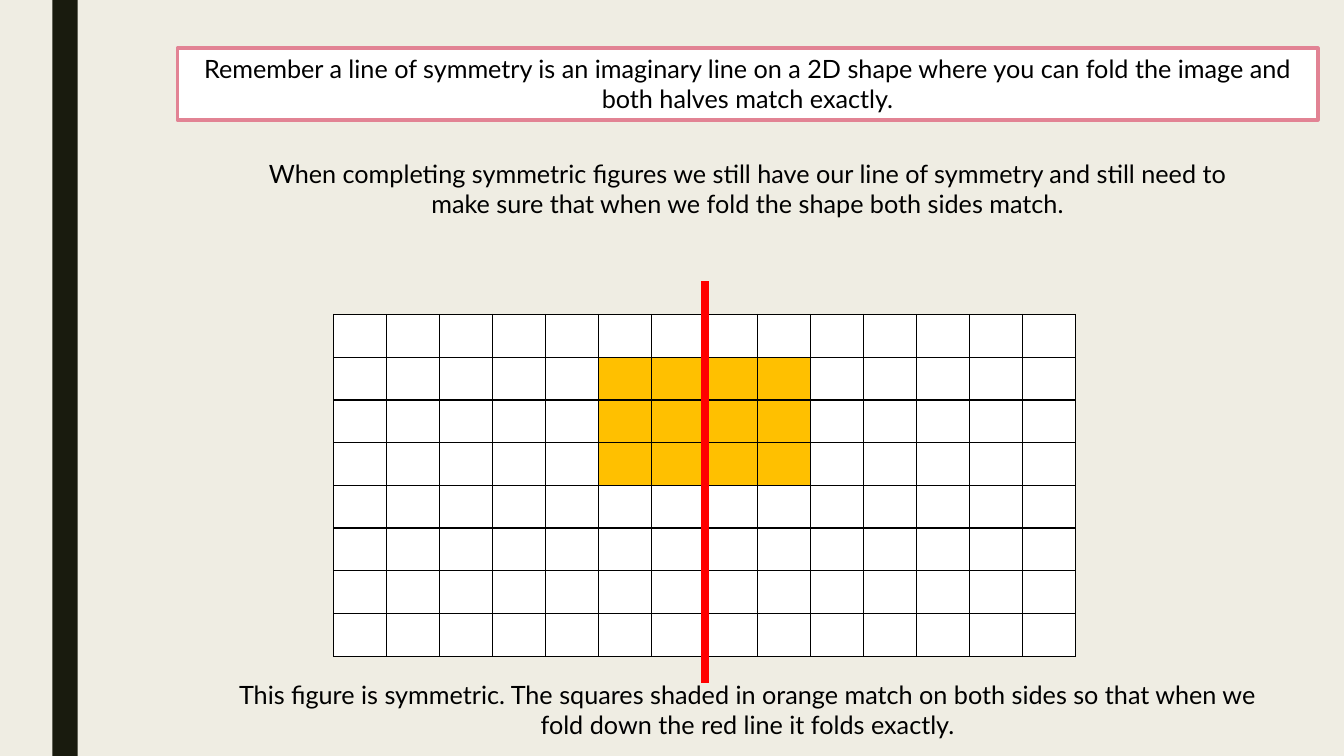
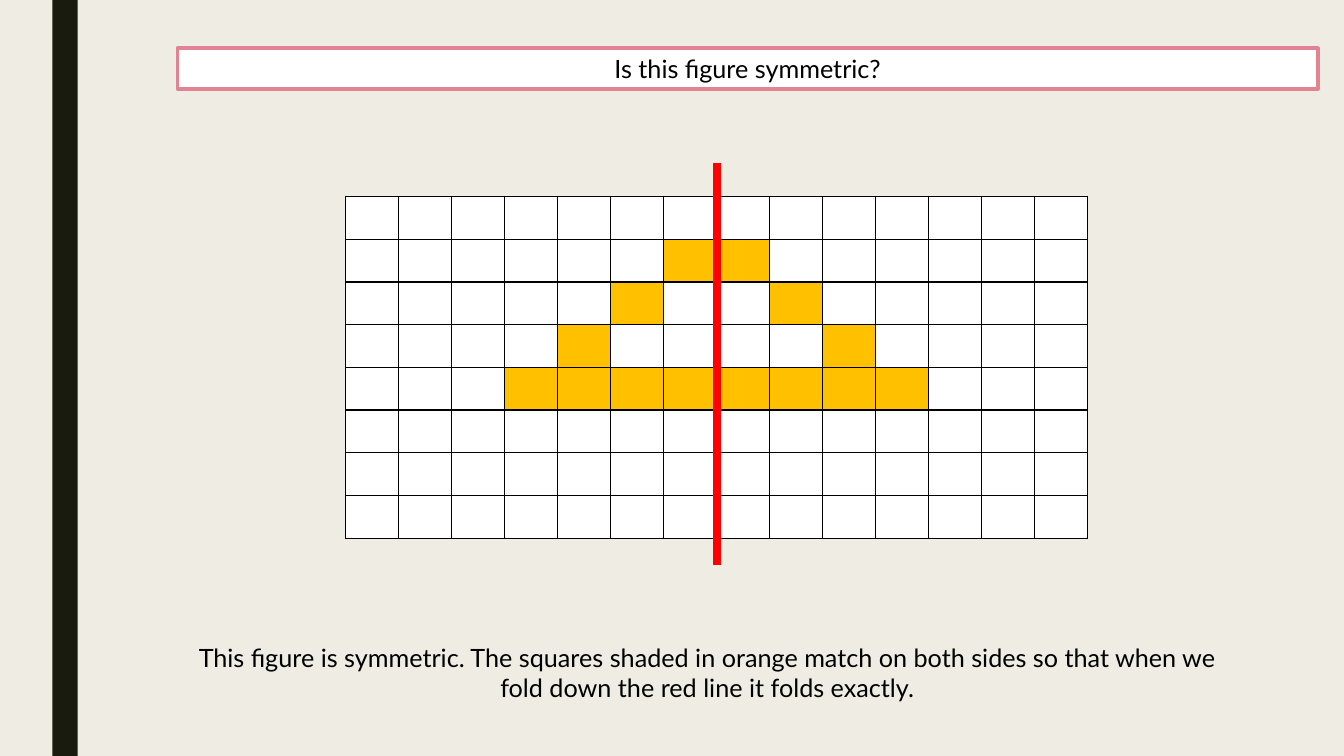
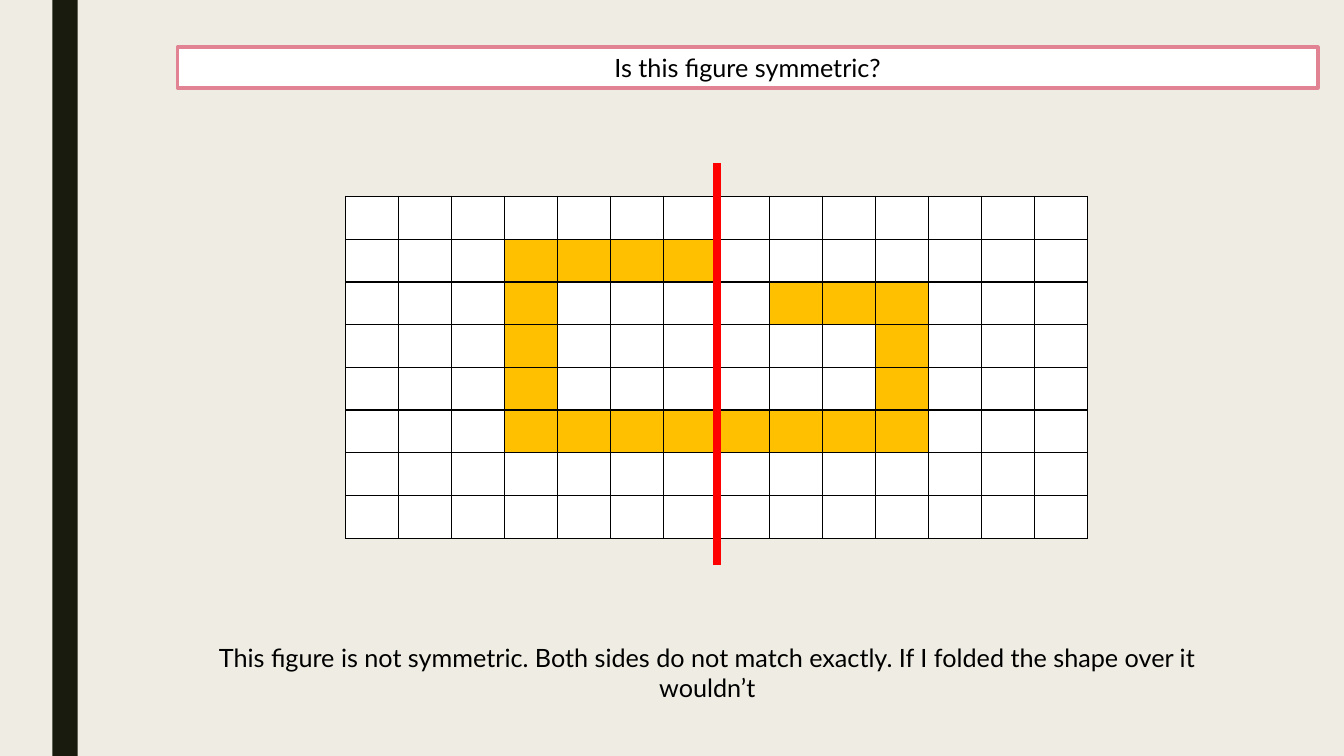
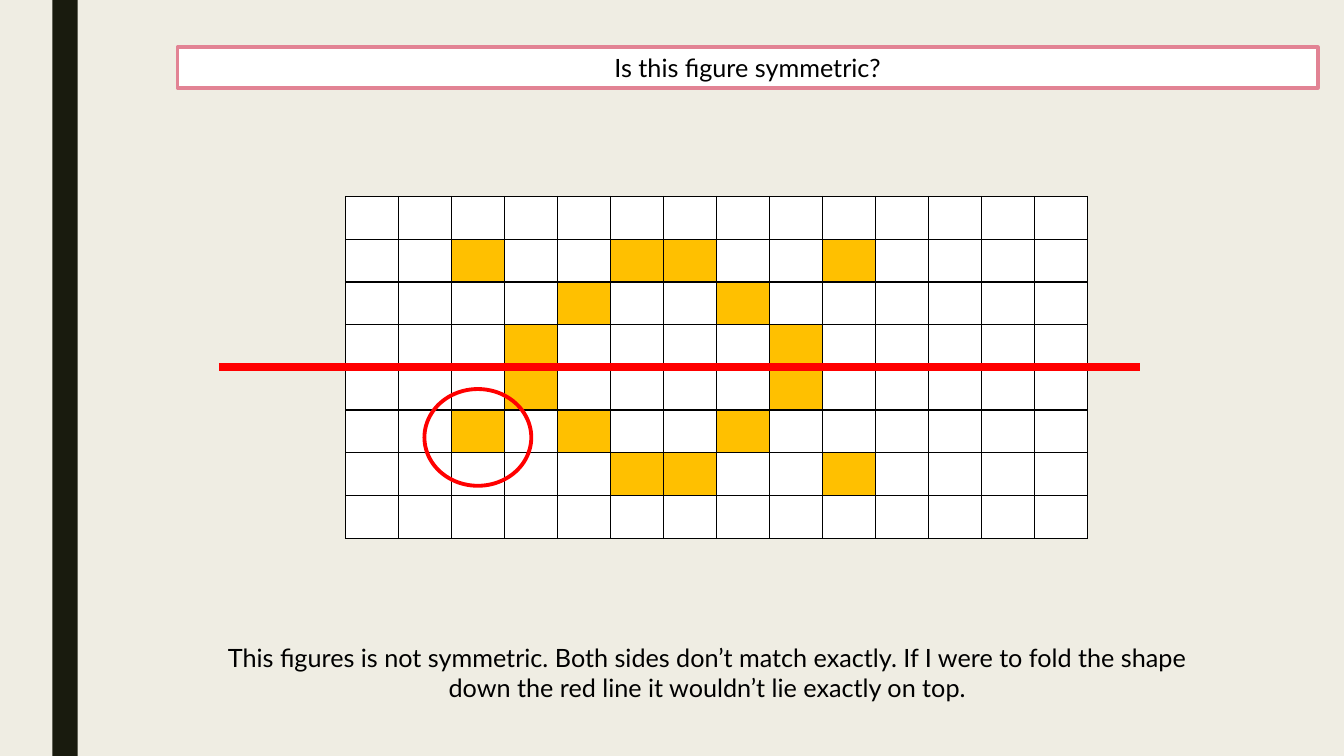
"""Build four slides on completing symmetric figures."""
from lxml import etree
from pptx import Presentation
from pptx.dml.color import RGBColor
from pptx.enum import shapes, text
from pptx.oxml import ns
from pptx.util import Emu, Inches, Pt

INK, PAPER, CREAM, BAND = "000000", "FFFFFF", "EFEDE3", "191B0E"
PINK, ORANGE, RED = "E28394", "FFC000", "FF0000"
FONT, TEXT_SIZE = "Lato", 18
ROWS, COLUMNS = 8, 14
GRID_WIDTH, GRID_HEIGHT = 7.36, 3.39

QUESTION = "Is this figure symmetric?"
SYMMETRIC = ("This figure is symmetric. The squares shaded in orange match on both sides "
             "so that when we fold down the red line it folds exactly.")

RECTANGLE = {1: (5, 6, 7, 8), 2: (5, 6, 7, 8), 3: (5, 6, 7, 8)}
TRIANGLE = {1: (6, 7), 2: (5, 8), 3: (4, 9), 4: range(3, 11)}
BROKEN_FRAME = {1: range(3, 7), 2: (3, 8, 9, 10), 3: (3, 10), 4: (3, 10), 5: range(3, 11)}
RING = {1: (2, 5, 6, 9), 2: (4, 7), 3: (3, 8), 4: (3, 8), 5: (2, 4, 7), 6: (5, 6, 9)}


def paint(color_format, color):
    """Set a fill's or font's colour from a hex string."""
    color_format.rgb = RGBColor.from_string(color)


def fill_with(owner, color):
    """Give a shape, cell or background a solid fill."""
    owner.fill.solid()
    paint(owner.fill.fore_color, color)


def outline(shape, color, points):
    """Set the colour and width of a line."""
    paint(shape.line.color, color)
    shape.line.width = Pt(points)


def place(shape, left, top, width, height):
    """Move and size a shape in inches."""
    shape.left, shape.top = Inches(left), Inches(top)
    shape.width, shape.height = Inches(width), Inches(height)


def write(shape, wording):
    """Write one centred paragraph in the shared text style."""
    frame = shape.text_frame
    frame.word_wrap = True
    frame.auto_size = text.MSO_AUTO_SIZE.NONE
    frame.vertical_anchor = text.MSO_ANCHOR.TOP
    paragraph = frame.paragraphs[0]
    paragraph.alignment = text.PP_ALIGN.CENTER
    run = paragraph.add_run()
    run.text = wording
    run.font.name, run.font.size = FONT, Pt(TEXT_SIZE)
    paint(run.font.color, INK)


def add_heading(slide, wording, top, height=0.4):
    """Put the title in its white box with a pink border."""
    heading = slide.shapes.title
    place(heading, 1.76, top, 11.31, height)
    fill_with(heading, PAPER)
    outline(heading, PINK, 2.75)
    write(heading, wording)


def add_caption(slide, wording, left=1.86, top=6.32):
    """Add a two-line explanation."""
    caption = slide.shapes.add_textbox(Inches(left), Inches(top), Inches(10.31), Inches(0.71))
    write(caption, wording)


def border_cell(cell):
    """Draw a thin black line on all four sides of a cell."""
    properties = cell._tc.get_or_add_tcPr()
    for side in ("a:lnL", "a:lnR", "a:lnT", "a:lnB"):
        line = etree.SubElement(properties, ns.qn(side), w=str(Pt(1)))
        solid = etree.SubElement(line, ns.qn("a:solidFill"))
        etree.SubElement(solid, ns.qn("a:srgbClr"), val=INK)


def add_grid(slide, figure, left=3.43, top=1.95):
    """Add the squared grid with the figure's cells shaded."""
    grid = slide.shapes.add_table(ROWS, COLUMNS, Inches(left), Inches(top),
                                  Inches(GRID_WIDTH), Inches(GRID_HEIGHT)).table
    grid.first_row = grid.horz_banding = False
    for row in range(ROWS):
        for column in range(COLUMNS):
            square = grid.cell(row, column)
            border_cell(square)
            fill_with(square, ORANGE if column in figure.get(row, ()) else PAPER)


def add_fold_line(slide, start, end):
    """Draw the red line of symmetry."""
    fold = slide.shapes.add_connector(shapes.MSO_CONNECTOR.STRAIGHT,
                                      *(Inches(length) for length in (*start, *end)))
    outline(fold, RED, 6)
    etree.SubElement(fold.element.spPr, ns.qn("a:effectLst"))


def add_upright_fold(slide, left=3.43, top=1.95):
    """Draw the fold line down the middle of a grid."""
    middle = left + GRID_WIDTH / 2
    add_fold_line(slide, (middle, top - 0.33), (middle, top + GRID_HEIGHT + 0.27))


def add_mismatch_ring(slide):
    """Circle the square that has no match."""
    ring = slide.shapes.add_shape(shapes.MSO_SHAPE.OVAL, Inches(4.21), Inches(3.86),
                                  Inches(1.06), Inches(0.96))
    ring.shadow.inherit = False
    ring.fill.background()
    outline(ring, RED, 2.75)


def dress_layout(deck, layout):
    """Give all slides the cream background and the dark side band."""
    fill_with(deck.slide_master.background, CREAM)
    band = deck.slides[0].shapes.add_shape(shapes.MSO_SHAPE.RECTANGLE, Inches(0.52), Emu(0),
                                           Inches(0.25), deck.slide_height)
    band.shadow.inherit = False
    fill_with(band, BAND)
    band.line.fill.background()
    layout.shapes.element.insert(2, band.element)


def main():
    """Build and save the deck."""
    deck = Presentation()
    deck.slide_width, deck.slide_height = Inches(13.33), Inches(7.5)
    layout = deck.slide_layouts[5]
    reminder, triangle, frame, ring = [deck.slides.add_slide(layout) for _ in range(4)]
    dress_layout(deck, layout)

    add_heading(reminder, "Remember a line of symmetry is an imaginary line on a 2D shape where "
                "you can fold the image and both halves match exactly.", 0.48, 0.71)
    add_caption(reminder, "When completing symmetric figures we still have our line of symmetry "
                "and still need to make sure that when we fold the shape both sides match.",
                2.26, 1.52)
    add_grid(reminder, RECTANGLE, 3.31, 3.12)
    add_upright_fold(reminder, 3.31, 3.12)
    add_caption(reminder, SYMMETRIC, 2.26, 6.69)

    add_heading(triangle, QUESTION, 0.48)
    add_grid(triangle, TRIANGLE)
    add_upright_fold(triangle)
    add_caption(triangle, SYMMETRIC)

    add_heading(frame, QUESTION, 0.47)
    add_grid(frame, BROKEN_FRAME)
    add_upright_fold(frame)
    add_caption(frame, "This figure is not symmetric. Both sides do not match exactly. "
                "If I folded the shape over it wouldn’t")

    add_heading(ring, QUESTION, 0.47)
    add_grid(ring, RING)
    add_fold_line(ring, (2.17, 3.64), (11.31, 3.64))
    add_caption(ring, "This figures is not symmetric. Both sides don’t match exactly. If I were "
                "to fold the shape down the red line it wouldn’t lie exactly on top.")
    add_mismatch_ring(ring)

    deck.save("out.pptx")


if __name__ == "__main__":
    main()
